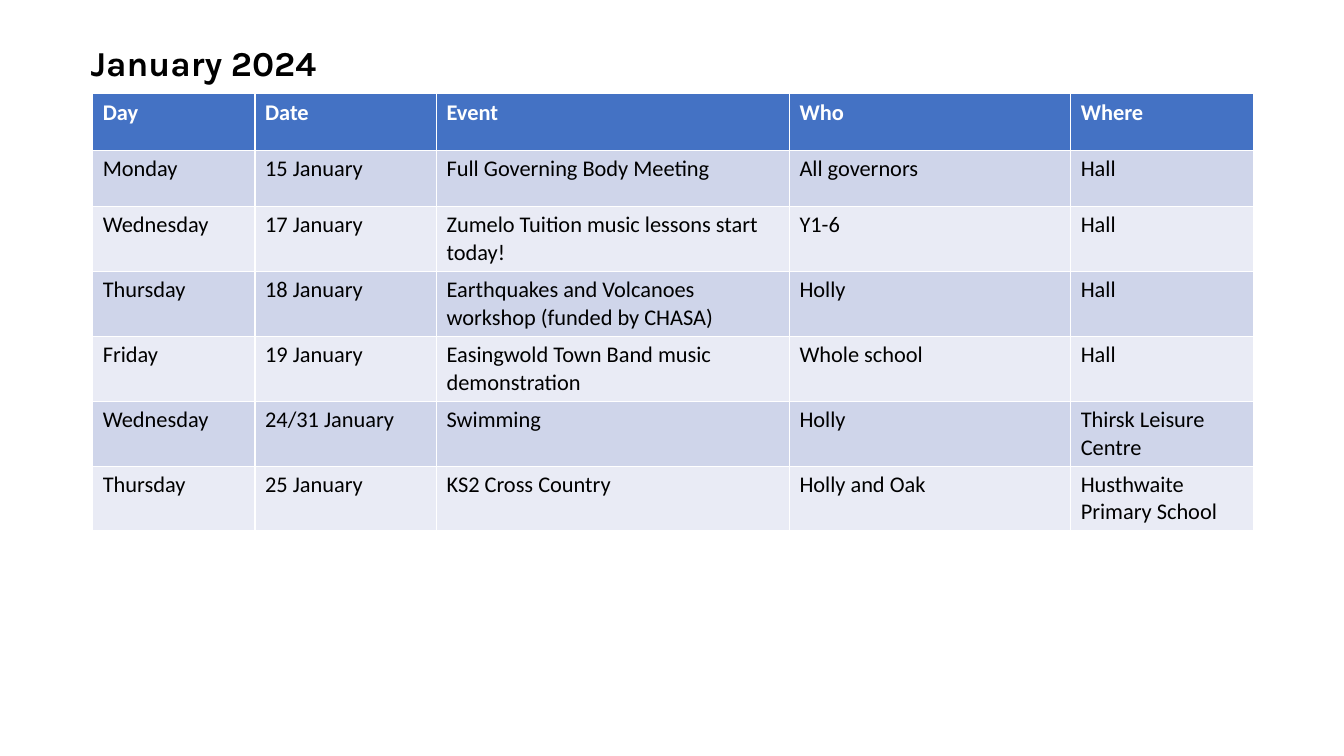
from dataclasses import dataclass

from pptx import Presentation
from pptx.dml.color import RGBColor
from pptx.enum.text import MSO_ANCHOR, PP_ALIGN
from pptx.util import Inches, Pt

LEFT, MIDDLE = PP_ALIGN.LEFT, MSO_ANCHOR.MIDDLE
TITLE_ONLY = 5


@dataclass(frozen=True)
class Theme:
    title_font: str = "Karla"
    body_font: str = "Calibri"
    title_size: int = 25
    body_size: int = 16
    text: str = "000000"
    header_text: str = "FFFFFF"
    header_fill: str = "4472C4"
    bands: tuple = ("CFD5EA", "E9EBF5")


THEME = Theme()
TITLE_BOX = (0.8, 0.36, 4.45, 0.52)
TABLE_BOX = (0.92, 0.93, 11.5, 3.92)
COLUMN_WIDTHS = (1.61, 1.8, 3.5, 2.79, 1.81)

HEADINGS = ("Day", "Date", "Event", "Who", "Where")
EVENTS = (
    ("Monday", "15 January", "Full Governing Body Meeting", "All governors", "Hall"),
    ("Wednesday", "17 January", "Zumelo Tuition music lessons start today!", "Y1-6", "Hall"),
    ("Thursday", "18 January", "Earthquakes and Volcanoes workshop (funded by CHASA)", "Holly", "Hall"),
    ("Friday", "19 January", "Easingwold Town Band music demonstration", "Whole school", "Hall"),
    ("Wednesday", "24/31 January", "Swimming", "Holly", "Thirsk Leisure Centre"),
    ("Thursday", "25 January", "KS2 Cross Country", "Holly and Oak", "Husthwaite Primary School"),
)


def format_font(font, color, **values):
    for name, value in values.items():
        setattr(font, name, value)
    font.color.rgb = RGBColor.from_string(color)


def add_title(slide, box, text):
    title = slide.shapes.title
    title.left, title.top, title.width, title.height = map(Inches, box)
    frame = title.text_frame
    frame.text = text
    frame.vertical_anchor = MIDDLE
    paragraph = frame.paragraphs[0]
    paragraph.alignment = LEFT
    format_font(paragraph.runs[0].font, THEME.text, name=THEME.title_font,
                size=Pt(THEME.title_size), bold=True)


def fill_cell(cell, text, fill, color, bold):
    cell.text = text
    cell.fill.solid()
    cell.fill.fore_color.rgb = RGBColor.from_string(fill)
    format_font(cell.text_frame.paragraphs[0].runs[0].font, color,
                name=THEME.body_font, size=Pt(THEME.body_size), bold=bold)


def add_calendar(slide, box, headings, events):
    """Add an event table; its style supplies the white cell borders."""
    rows = (headings, *events)
    table = slide.shapes.add_table(len(rows), len(headings), *map(Inches, box)).table
    for column, width in zip(table.columns, COLUMN_WIDTHS):
        column.width = Inches(width)
    for row_index, row in enumerate(rows):
        is_header = row_index == 0
        fill = THEME.header_fill if is_header else THEME.bands[(row_index - 1) % 2]
        color = THEME.header_text if is_header else THEME.text
        for column_index, text in enumerate(row):
            fill_cell(table.cell(row_index, column_index), text, fill, color, is_header)


def main():
    presentation = Presentation()
    presentation.slide_width, presentation.slide_height = Inches(13.33), Inches(7.5)
    slide = presentation.slides.add_slide(presentation.slide_layouts[TITLE_ONLY])
    add_title(slide, TITLE_BOX, "January 2024")
    add_calendar(slide, TABLE_BOX, HEADINGS, EVENTS)
    presentation.save("out.pptx")


if __name__ == "__main__":
    main()
